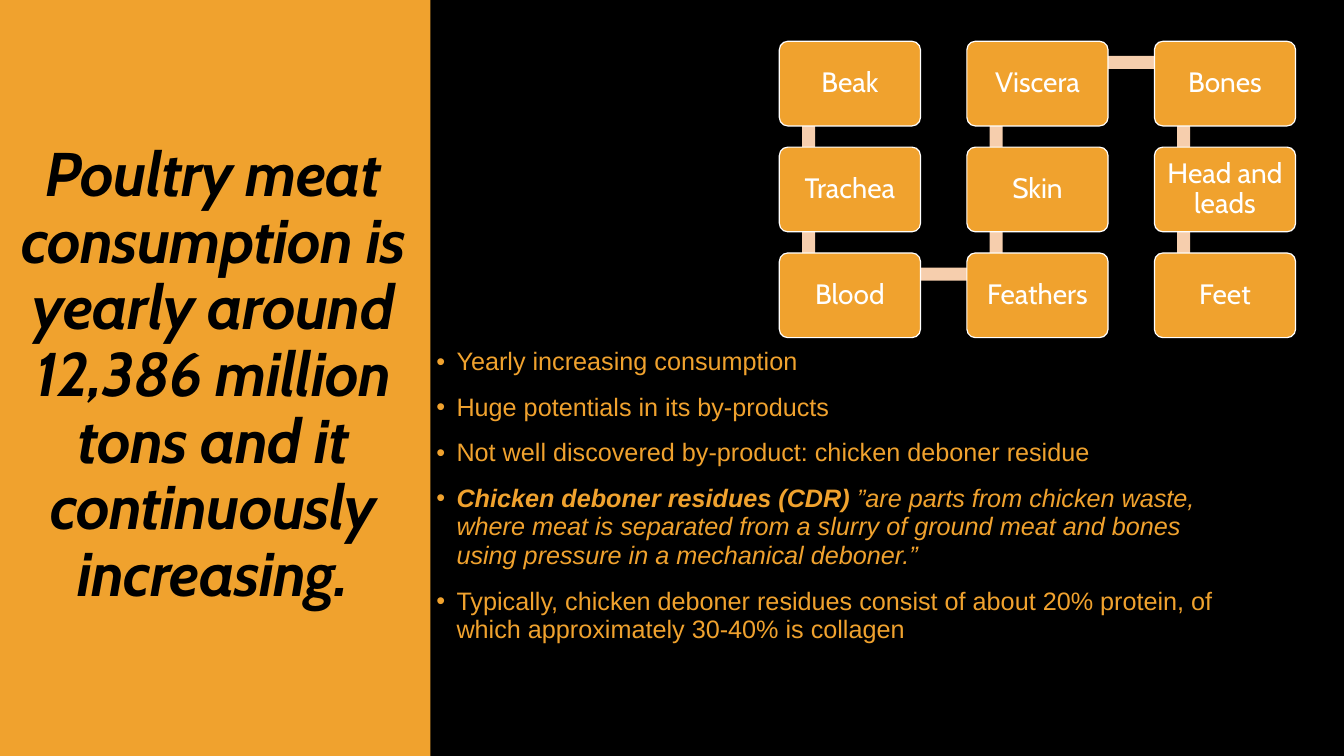
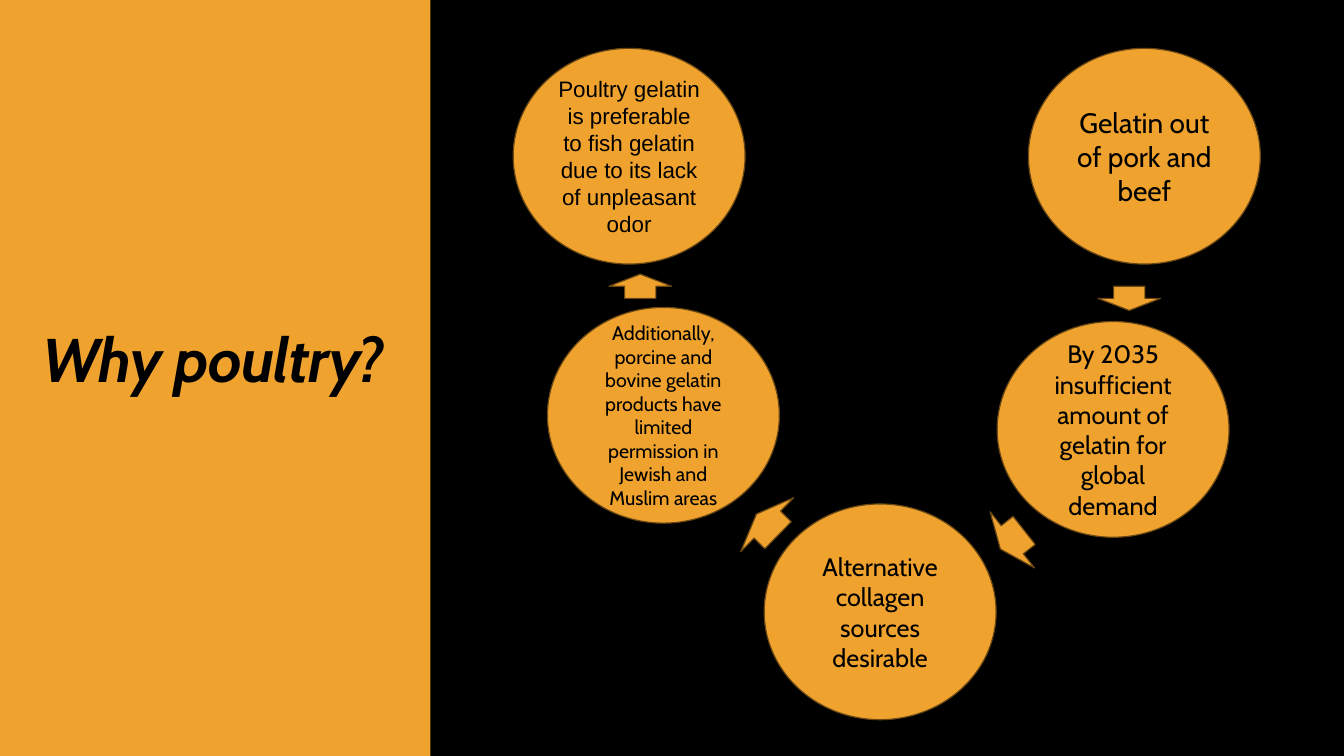
from dataclasses import dataclass
from itertools import pairwise

from lxml.etree import SubElement
from pptx import Presentation
from pptx.dml.color import RGBColor
from pptx.enum.shapes import MSO_SHAPE as Shape
from pptx.enum.text import MSO_ANCHOR as Anchor, PP_ALIGN as Align
from pptx.oxml.ns import qn
from pptx.shapes.autoshape import Shape as AutoShape
from pptx.slide import Slide
from pptx.text.text import TextFrame, _Paragraph as Paragraph
from pptx.util import Inches, Pt


@dataclass(frozen=True)
class Theme:
    black: str = "000000"
    orange: str = "F0A22E"
    peach: str = "F6CEAD"
    brown: str = "694714"
    white: str = "FFFFFF"
    display: str = "Cabin"
    plain: str = "Arial"
    title_size: int = 44
    part_size: int = 20
    body_size: int = 18
    outline: float = 0.85


@dataclass(frozen=True)
class Box:
    left: float
    top: float
    width: float
    height: float


@dataclass(frozen=True)
class Style:
    size: int
    color: str
    font: str
    bold: bool = False
    italic: bool = False
    spacing: int = 0  # hundredths of a point


@dataclass(frozen=True)
class Reason:
    left: float
    top: float
    text: str
    size: int
    font: str


@dataclass(frozen=True)
class Arrow:
    kind: Shape
    box: Box
    rotation: float = 0


THEME = Theme()
TITLE = Style(THEME.title_size, THEME.black, THEME.display, True, True, -60)
PART = Style(THEME.part_size, THEME.white, THEME.display)
BODY = Style(THEME.body_size, THEME.orange, THEME.plain)
QUOTE = Style(THEME.body_size, THEME.orange, THEME.plain, italic=True)
TERM = Style(THEME.body_size, THEME.orange, THEME.plain, True, True)

PANEL_WIDTH = 4.27
TITLE_WIDTH = 4.23

# Each column is listed from top to bottom.
PART_COLUMNS = [
    ["Beak", "Trachea", "Blood"],
    ["Viscera", "Skin", "Feathers"],
    ["Bones", "Head and leads", "Feet"],
]
PART_LEFT, PART_TOP = 7.73, 0.41
PART_WIDTH, PART_HEIGHT = 1.4, 0.84
COLUMN_STEP, ROW_STEP = 1.86, 1.05
LINK_X, LINK_Y, LINK_THICKNESS = 0.29, 0.21, 0.13

FACTS = [
    [("Yearly increasing consumption", BODY)],
    [("Huge potentials in its by-products", BODY)],
    [("Not well discovered by-product: chicken deboner residue", BODY)],
    [
        ("Chicken deboner residues (CDR) ", TERM),
        ("”are parts from chicken waste, where meat is separated from a slurry "
         "of ground meat and bones using pressure in a mechanical deboner.”", QUOTE),
    ],
    [("Typically, chicken deboner residues consist of about 20% protein, of which "
      "approximately 30-40% is collagen", BODY)],
]

REASON_WIDTH, REASON_HEIGHT = 2.3, 2.14
REASONS = [
    Reason(10.2, 0.48, "Gelatin out of pork and beef", 20, THEME.display),
    Reason(9.89, 3.19, "By 2035 insufficient amount of gelatin for global demand",
           18, THEME.display),
    Reason(7.58, 5, "Alternative collagen sources desirable", 18, THEME.display),
    Reason(5.43, 3.05, "Additionally, porcine and bovine gelatin products have "
           "limited permission in Jewish and Muslim areas", 14, THEME.display),
    Reason(5.09, 0.48, "Poultry gelatin is preferable to fish gelatin due to its "
           "lack of unpleasant odor", 16, THEME.plain),
]
ARROWS = [
    Arrow(Shape.DOWN_ARROW, Box(10.89, 2.84, 0.62, 0.24)),
    Arrow(Shape.LEFT_ARROW, Box(9.89, 5, 0.3, 0.71), 321.7),
    Arrow(Shape.LEFT_ARROW, Box(7.46, 4.83, 0.3, 0.75), 44.5),
    Arrow(Shape.UP_ARROW, Box(6.04, 2.72, 0.62, 0.24)),
]


def place(box: Box) -> tuple[int, ...]:
    return tuple(Inches(v) for v in (box.left, box.top, box.width, box.height))


def add_run(paragraph: Paragraph, text: str, style: Style) -> None:
    run = paragraph.add_run()
    run.text = text
    font = run.font
    font.size, font.name = Pt(style.size), style.font
    font.bold, font.italic = style.bold, style.italic
    font.color.rgb = RGBColor.from_string(style.color)
    if style.spacing:
        run._r.get_or_add_rPr().set("spc", str(style.spacing))


def write_centred(frame: TextFrame, text: str, style: Style, spacing: float) -> None:
    frame.word_wrap = True
    frame.vertical_anchor = Anchor.MIDDLE
    paragraph = frame.paragraphs[0]
    paragraph.alignment = Align.CENTER
    paragraph.line_spacing = spacing
    add_run(paragraph, text, style)


def add_shape(slide: Slide, kind: Shape, box: Box, fill: str,
              line: str | None = None) -> AutoShape:
    shape = slide.shapes.add_shape(kind, *place(box))
    shape.shadow.inherit = False
    shape.fill.solid()
    shape.fill.fore_color.rgb = RGBColor.from_string(fill)
    if line:
        shape.line.color.rgb = RGBColor.from_string(line)
        shape.line.width = Pt(THEME.outline)
    else:
        shape.line.fill.background()
    return shape


def add_titled_slide(deck: Presentation, title: str, top: float, height: float) -> Slide:
    """Add a black slide with the title on an orange panel at the left."""
    slide = deck.slides.add_slide(deck.slide_layouts[6])
    backdrop = slide.background.fill
    backdrop.solid()
    backdrop.fore_color.rgb = RGBColor.from_string(THEME.black)
    add_shape(slide, Shape.RECTANGLE, Box(0, 0, PANEL_WIDTH, 7.5), THEME.orange)
    heading = slide.shapes.add_textbox(*place(Box(0, top, TITLE_WIDTH, height)))
    write_centred(heading.text_frame, title, TITLE, 0.9)
    return slide


def add_bullet(paragraph: Paragraph) -> None:
    properties = paragraph._p.get_or_add_pPr()
    properties.set("marL", str(Inches(0.2)))
    properties.set("indent", str(-Inches(0.2)))
    color = SubElement(properties, qn("a:buClr"))
    SubElement(color, qn("a:srgbClr"), val=THEME.orange)
    SubElement(properties, qn("a:buFont"), typeface=THEME.plain)
    SubElement(properties, qn("a:buChar"), char="•")


def add_facts(slide: Slide) -> None:
    frame = slide.shapes.add_textbox(*place(Box(4.23, 3.4, 8, 2.95))).text_frame
    frame.word_wrap = True
    for index, runs in enumerate(FACTS):
        paragraph = frame.add_paragraph() if index else frame.paragraphs[0]
        add_bullet(paragraph)
        paragraph.line_spacing = 0.95
        if index:
            paragraph.space_before = Pt(12)
        for text, style in runs:
            add_run(paragraph, text, style)


def add_parts_chain(slide: Slide) -> None:
    """Draw the parts as a chain running down, up and down the columns."""
    chain: list[tuple[str, Box]] = []
    for column, names in enumerate(PART_COLUMNS):
        boxes = [
            (name, Box(PART_LEFT + column * COLUMN_STEP, PART_TOP + row * ROW_STEP,
                       PART_WIDTH, PART_HEIGHT))
            for row, name in enumerate(names)
        ]
        chain += reversed(boxes) if column % 2 else boxes

    for (_, start), (_, end) in pairwise(chain):
        link = Box(
            min(start.left, end.left) + LINK_X - LINK_THICKNESS / 2,
            min(start.top, end.top) + LINK_Y - LINK_THICKNESS / 2,
            abs(end.left - start.left) + LINK_THICKNESS,
            abs(end.top - start.top) + LINK_THICKNESS,
        )
        add_shape(slide, Shape.RECTANGLE, link, THEME.peach)

    for name, box in chain:
        part = add_shape(slide, Shape.ROUNDED_RECTANGLE, box, THEME.orange, THEME.white)
        part.adjustments[0] = 0.1
        write_centred(part.text_frame, name, PART, 0.9)


def add_reasons(slide: Slide) -> None:
    for reason in REASONS:
        box = Box(reason.left, reason.top, REASON_WIDTH, REASON_HEIGHT)
        circle = add_shape(slide, Shape.OVAL, box, THEME.orange, THEME.brown)
        style = Style(reason.size, THEME.black, reason.font)
        write_centred(circle.text_frame, reason.text, style, 1.0)
    for arrow in ARROWS:
        pointer = add_shape(slide, arrow.kind, arrow.box, THEME.orange, THEME.brown)
        pointer.rotation = arrow.rotation


def main() -> None:
    deck = Presentation()
    deck.slide_width, deck.slide_height = Inches(13.33), Inches(7.5)

    consumption = add_titled_slide(
        deck,
        "Poultry meat consumption is yearly around 12,386 million tons "
        "and it continuously increasing.",
        0.09, 7.29,
    )
    add_facts(consumption)
    add_parts_chain(consumption)

    why_poultry = add_titled_slide(deck, "Why poultry?", 0.94, 5.32)
    add_reasons(why_poultry)

    deck.save("out.pptx")


if __name__ == "__main__":
    main()
